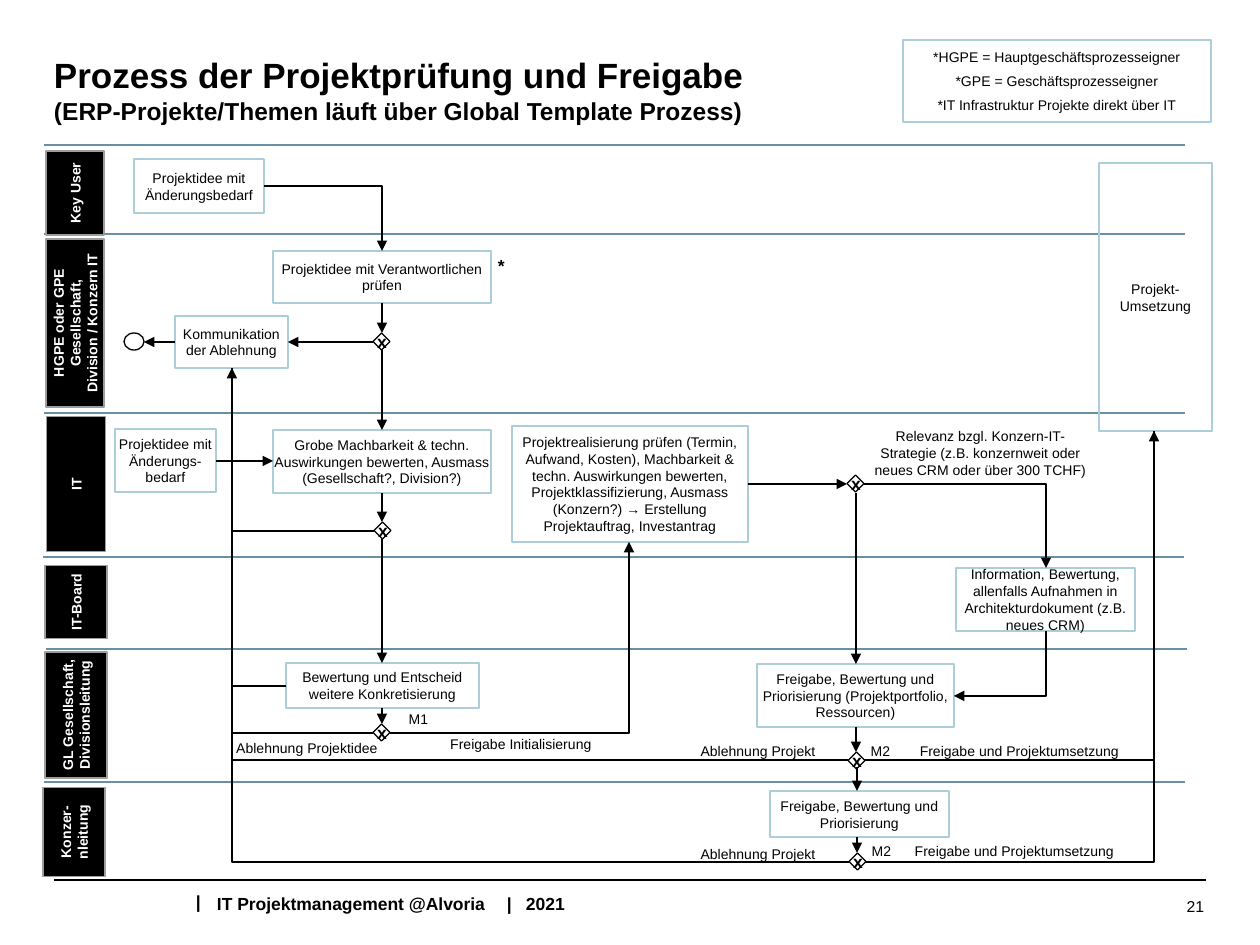
from lxml import etree
from pptx import Presentation
from pptx.dml.color import RGBColor
from pptx.enum.shapes import MSO_CONNECTOR, MSO_SHAPE
from pptx.enum.text import MSO_ANCHOR, PP_ALIGN
from pptx.oxml.ns import qn
from pptx.util import Pt

PX = 914400 / 126
RECT = MSO_SHAPE.RECTANGLE
DIAMOND = MSO_SHAPE.FLOWCHART_DECISION
CIRCLE = MSO_SHAPE.FLOWCHART_CONNECTOR
STRAIGHT, ELBOW = MSO_CONNECTOR.STRAIGHT, MSO_CONNECTOR.ELBOW
TOP, MIDDLE = MSO_ANCHOR.TOP, MSO_ANCHOR.MIDDLE
LEFT, CENTER, RIGHT = PP_ALIGN.LEFT, PP_ALIGN.CENTER, PP_ALIGN.RIGHT
BLACK, WHITE, GREY = "000000", "FFFFFF", "9D9D9C"
PALE_BLUE, LANE_BLUE = "ACCED9", "698FA4"

deck = Presentation()
deck.slide_width = round(1260 * PX)
deck.slide_height = round(945 * PX)
page = deck.slides.add_slide(deck.slide_layouts[6])


def add_box(kind, rect, lines, sizes=(8,), bold=False, color=BLACK, fill=None,
            outline=PALE_BLUE, align=CENTER, anchor=MIDDLE, margin=0, gap=0):
    place = [round(value * PX) for value in rect]
    if kind is None:
        box = page.shapes.add_textbox(*place)
    else:
        box = page.shapes.add_shape(kind, *place)
        box.shadow.inherit = False
        box.line.color.rgb = RGBColor.from_string(outline)
        box.line.width = Pt(0.75)
        if fill:
            box.fill.solid()
            box.fill.fore_color.rgb = RGBColor.from_string(fill)
        else:
            box.fill.background()
    frame = box.text_frame
    frame_format = {"word_wrap": True, "vertical_anchor": anchor,
                    "margin_left": 0, "margin_right": 0,
                    "margin_top": round(margin * PX),
                    "margin_bottom": round(margin * PX)}
    for name, value in frame_format.items():
        setattr(frame, name, value)
    for index, line in enumerate(lines):
        para = frame.add_paragraph() if index else frame.paragraphs[0]
        para.alignment = align
        if index and gap:
            para.space_before = Pt(gap)
        span = para.add_run()
        span.text = line
        font_format = {"name": "Arial", "bold": bold,
                       "size": Pt(sizes[index % len(sizes)])}
        for name, value in font_format.items():
            setattr(span.font, name, value)
        span.font.color.rgb = RGBColor.from_string(color)
    return box


def connect(kind, ends, arrow=None, color=BLACK):
    line = page.shapes.add_connector(kind, *[round(value * PX) for value in ends])
    line.line.color.rgb = RGBColor.from_string(color)
    line.line.width = Pt(0.75)
    properties = line._element.spPr
    if kind == ELBOW:
        properties.find(qn("a:prstGeom")).set("prst", "bentConnector2")
    if arrow:
        etree.SubElement(properties.find(qn("a:ln")), qn(arrow), type="triangle")
    etree.SubElement(properties, qn("a:effectLst"))


connect(STRAIGHT, (54, 880, 1206, 880))
add_box(None, (196, 891, 12, 22), ["|"], (10,), True, align=LEFT)
footer = add_box(None, (217, 892, 400, 22),
                 ["IT Projektmanagement @Alvoria\t|\t2021"], (10,), True, align=LEFT)
tabs = etree.SubElement(footer.text_frame.paragraphs[0]._p.get_or_add_pPr(), qn("a:tabLst"))
for stop in (290, 309):
    etree.SubElement(tabs, qn("a:tab"), pos=str(round(stop * PX)), algn="l")
add_box(None, (922, 876, 282, 60), ["21"], (9,), align=RIGHT)
add_box(None, (54, 54, 830, 75),
        ["Prozess der Projektprüfung und Freigabe",
         "(ERP-Projekte/Themen läuft über Global Template Prozess)"],
        (20, 14), True, align=LEFT, anchor=TOP)

for left, y in [(44, 145), (44, 234), (44, 413), (43, 557), (46, 649), (44, 782)]:
    connect(STRAIGHT, (left, y, left + 1141, y), color=LANE_BLUE)

lanes = [
    (75, 193, 84, 58, ["Key User"]),
    (75, 323, 168, 58, ["HGPE oder GPE Gesellschaft,", "Division / Konzern IT"]),
    (76, 484, 135, 59, ["IT"]),
    (76, 602, 73, 62, ["IT-Board"]),
    (76, 715, 126, 62, ["GL Gesellschaft, Divisionsleitung"]),
    (74, 832, 89, 62, ["Konzer-nleitung"]),
]
for x, y, length, depth, lines in lanes:
    lane = add_box(RECT, (x - length / 2, y - depth / 2, length, depth), lines,
                   bold=True, color=WHITE, fill=BLACK, outline=GREY, margin=15)
    lane.rotation = 270

steps = [
    (134, 159, 130, 54, "Projektidee mit Änderungsbedarf"),
    (273, 251, 218, 52, "Projektidee mit Verantwortlichen prüfen"),
    (175, 316, 113, 52, "Kommunikation der Ablehnung"),
    (115, 429, 101, 63, "Projektidee mit Änderungs-bedarf"),
    (273, 430, 218, 63, "Grobe Machbarkeit & techn. Auswirkungen bewerten, "
                        "Ausmass (Gesellschaft?, Division?)"),
    (512, 426, 236, 116, "Projektrealisierung prüfen (Termin, Aufwand, Kosten), "
                         "Machbarkeit & techn. Auswirkungen bewerten, "
                         "Projektklassifizierung, Ausmass (Konzern?) → "
                         "Erstellung Projektauftrag, Investantrag"),
    (956, 568, 179, 63, "Information, Bewertung, allenfalls Aufnahmen in "
                        "Architekturdokument (z.B. neues CRM)"),
    (286, 663, 193, 45, "Bewertung und Entscheid weitere Konkretisierung"),
    (757, 664, 197, 63, "Freigabe, Bewertung und Priorisierung "
                        "(Projektportfolio, Ressourcen)"),
    (770, 791, 179, 46, "Freigabe, Bewertung und Priorisierung"),
    (1099, 163, 113, 268, "Projekt-Umsetzung"),
]
for *rect, text in steps:
    add_box(RECT, rect, [text])
add_box(RECT, (903, 40, 308, 82),
        ["*HGPE = Hauptgeschäftsprozesseigner", "*GPE = Geschäftsprozesseigner",
         "*IT Infrastruktur Projekte direkt über IT"], gap=4.1)

gateways = [(373, 333), (847, 475), (374, 522), (373, 724), (848, 752), (849, 853)]
for left, top in gateways:
    add_box(DIAMOND, (left, top, 17, 17), ["x"], (10,), True, outline=BLACK)
add_box(CIRCLE, (124, 333, 20, 17), [], outline=BLACK)

straight_arrows = [
    (382, 303, 382, 333), (382, 350, 382, 430), (373, 342, 288, 342),
    (175, 342, 144, 342), (216, 461, 273, 461), (382, 493, 382, 522),
    (382, 539, 382, 663), (382, 708, 382, 724), (748, 484, 847, 484),
    (856, 493, 856, 664), (856, 727, 856, 752), (857, 767, 857, 791),
    (857, 837, 857, 853),
]
for ends in straight_arrows:
    connect(STRAIGHT, ends, "a:tailEnd")
connect(STRAIGHT, (848, 760, 232, 760))

elbow_arrows = [
    (264, 186, 382, 251), (864, 484, 1046, 568), (373, 733, 232, 368),
    (390, 733, 629, 542), (864, 760, 1154, 431),
]
for ends in elbow_arrows:
    connect(ELBOW, ends, "a:tailEnd")
connect(ELBOW, (954, 696, 1046, 631), "a:headEnd")
for ends in [(865, 862, 1154, 431), (849, 862, 232, 368),
             (286, 686, 232, 368), (374, 531, 232, 368)]:
    connect(ELBOW, ends)

labels = [
    (869, 428, 223, 50, "Relevanz bzgl. Konzern-IT-Strategie (z.B. konzernweit "
                        "oder neues CRM oder über 300 TCHF)"),
    (436, 736, 170, 16, "Freigabe Initialisierung"),
    (222, 740, 170, 16, "Ablehnung Projektidee"),
    (673, 742, 170, 16, "Ablehnung Projekt"),
    (673, 846, 170, 16, "Ablehnung Projekt"),
    (867, 743, 305, 16, "Freigabe und Projektumsetzung"),
    (862, 843, 305, 16, "Freigabe und Projektumsetzung"),
    (401, 711, 35, 16, "M1"),
    (863, 742, 35, 16, "M2"),
    (864, 843, 35, 16, "M2"),
]
for *rect, text in labels:
    add_box(None, rect, [text], anchor=TOP)
add_box(None, (498, 255, 112, 48), ["*"], (10,), True, align=LEFT, anchor=TOP)

deck.save("out.pptx")
